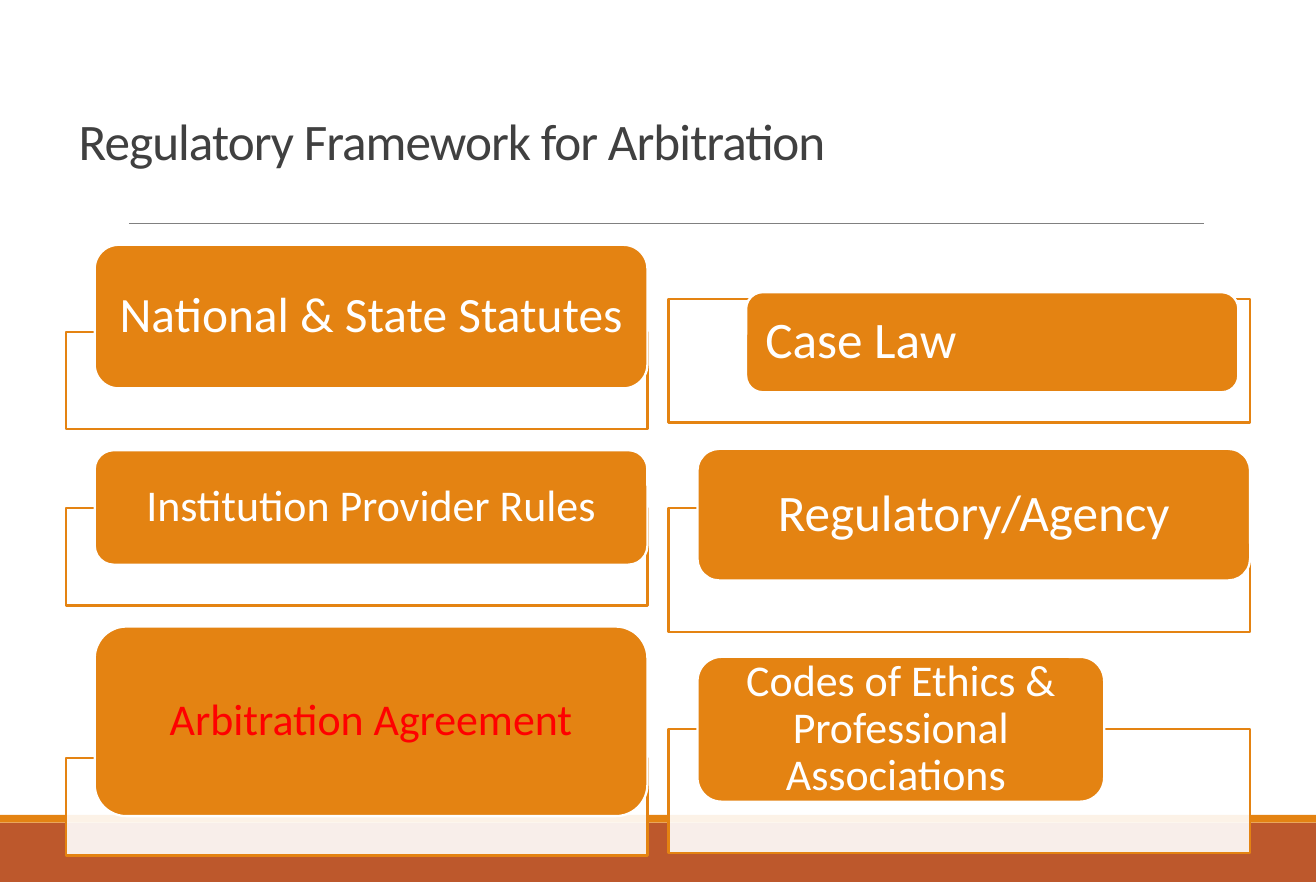
from pptx import Presentation
from pptx.dml.color import RGBColor
from pptx.enum.shapes import MSO_CONNECTOR, MSO_SHAPE
from pptx.enum.text import MSO_ANCHOR, PP_ALIGN
from pptx.oxml.ns import qn
from pptx.util import Inches, Pt
from lxml import etree

RECT, ROUND = MSO_SHAPE.RECTANGLE, MSO_SHAPE.ROUNDED_RECTANGLE
LEFT, CENTER = PP_ALIGN.LEFT, PP_ALIGN.CENTER
MIDDLE, BOTTOM = MSO_ANCHOR.MIDDLE, MSO_ANCHOR.BOTTOM

# Content
TITLE = "Regulatory Framework for Arbitration"
# Each column: frame left, frame height, items of
# (text, size, colour, align, frame top, label indent, label top, width, height)
COLUMNS = [
    (0.5, 0.74, [
        ("National & State Statutes", 27, "white", CENTER, 2.52, 0.22, 1.86, 4.2, 1.09),
        ("Institution Provider Rules", 24, "white", CENTER, 3.86, 0.22, 3.42, 4.2, 0.87),
        ("Arbitration Agreement", 24, "red", CENTER, 5.76, 0.22, 4.76, 4.2, 1.44),
    ]),
    (5.08, 0.94, [
        ("Case Law", 28, "white", LEFT, 2.27, 0.59, 2.22, 3.74, 0.76),
        ("Regulatory/Agency", 28, "white", CENTER, 3.86, 0.22, 3.41, 4.2, 1.0),
        ("Codes of Ethics & Professional Associations ", 24, "white", CENTER,
         5.54, 0.22, 4.99, 3.09, 1.1),
    ]),
]
FRAME_WIDTH = 4.42

THEME = {
    "font": "Calibri", "title_size": 28, "line": 1.25, "rule_line": 0.5,
    "orange": "E48312", "rust": "BD582C", "white": "FFFFFF",
    "red": "FF0000", "title": "404040", "rule": "808080",
}


def color(name):
    return RGBColor.from_string(THEME[name])


def add_box(s, kind, box, fill, line=None, alpha=None):
    sp = s.shapes.add_shape(kind, *map(Inches, box))
    sp.shadow.inherit = False
    sp.fill.solid()
    sp.fill.fore_color.rgb = color(fill)
    if alpha is not None:
        clr = sp.fill._xPr.find(qn("a:solidFill"))[0]
        etree.SubElement(clr, qn("a:alpha")).set("val", str(alpha * 1000))
    if line:
        sp.line.color.rgb = color(line)
        sp.line.width = Pt(THEME["line"])
    else:
        sp.line.fill.background()
    return sp


def set_text(sp, text, size, clr, align, anchor, spacing, **margins):
    tf = sp.text_frame
    frame_format = {"word_wrap": True, "vertical_anchor": anchor, **margins}
    for name, value in frame_format.items():
        setattr(tf, name, value)
    p = tf.paragraphs[0]
    p.alignment, p.line_spacing = align, spacing
    r = p.add_run()
    r.text = text
    for name, value in {"name": THEME["font"], "size": Pt(size)}.items():
        setattr(r.font, name, value)
    r.font.color.rgb = color(clr)
    return r


prs = Presentation()
prs.slide_width, prs.slide_height = Inches(10), Inches(6.7)
s = prs.slides.add_slide(prs.slide_layouts[6])

# Footer bands
add_box(s, RECT, (0, 6.25, 10, 0.45), "rust")
add_box(s, RECT, (0, 6.19, 10, 0.06), "orange")

# Rule below the title
rule = s.shapes.add_connector(MSO_CONNECTOR.STRAIGHT, *map(Inches, (0.98, 1.7, 9.15, 1.7)))
rule.line.color.rgb = color("rule")
rule.line.width = Pt(THEME["rule_line"])
etree.SubElement(rule._element.spPr, qn("a:effectLst"))

# Title
title = s.shapes.add_textbox(*map(Inches, (0.5, 0.52, 9, 0.83)))
r = set_text(title, TITLE, THEME["title_size"], "title", LEFT, BOTTOM, 0.85)
r._r.get_or_add_rPr().set("spc", "-50")

# Two columns of frames, each with a rounded label over it
label_margins = {"margin_left": Inches(0.11), "margin_right": Inches(0.11),
                 "margin_top": 0, "margin_bottom": 0}
for left, frame_height, items in COLUMNS:
    for text, size, clr, align, frame_top, indent, top, width, height in items:
        add_box(s, RECT, (left, frame_top, FRAME_WIDTH, frame_height),
                "white", "orange", alpha=90)
        label = add_box(s, ROUND, (left + indent, top, width, height), "orange", "white")
        set_text(label, text, size, clr, align, MIDDLE, 0.9, **label_margins)

prs.save("out.pptx")
